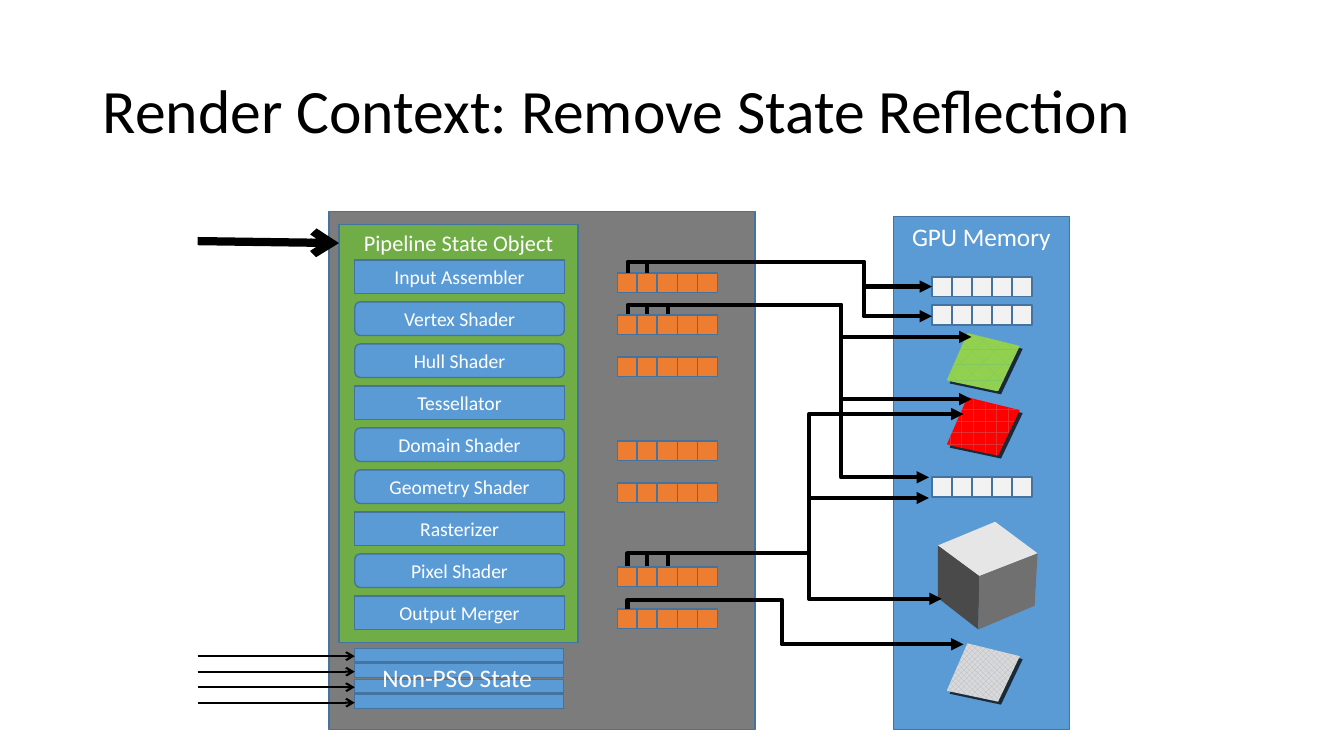
from dataclasses import dataclass
from typing import Any, NamedTuple, Optional

from lxml import etree
from pptx import Presentation
from pptx import util as u
from pptx.dml.color import RGBColor
from pptx.enum import dml, shapes, text
from pptx.oxml.ns import qn

COLOURS = {
    "ink": "000000", "paper": "FFFFFF", "context": "7C7C7C", "pso": "70AD47",
    "block": "5B9BD5", "edge": "43739E", "register": "ED7D31", "buffer": "F2F2F2",
    "tile_edge": "1B2A38", "cube_top": "E7E6E6", "cube_left": "4A4A4A", "cube_right": "707070",
    "brick": "E03030", "red": "FF0000", "divot": "7FC860", "green": "92D050",
    "diamond": "B4B8C4", "silver": "D9D9D9",
}
CM_PER_INCH = 2.54
RECT = shapes.MSO_SHAPE.RECTANGLE
ROUNDED = shapes.MSO_SHAPE.FLOWCHART_ALTERNATE_PROCESS
STAGE_TOP, REGISTER_TOP, ROW_PITCH = 2.63, 2.76, 0.425
CELL, CELL_PITCH, CELL_COUNT = 0.2, 0.2025, 5
CENTRED = {"alignment": text.PP_ALIGN.CENTER}
Points = list[tuple[float, float]]


class Box(NamedTuple):
    left: float
    top: float
    width: float
    height: float


class Stage(NamedTuple):
    label: str
    outline: Any


class Tile(NamedTuple):
    top: float
    pattern: Any
    fore: str
    back: str


@dataclass
class Route:
    start: tuple[float, float]
    end: tuple[float, float]
    bus: float
    trunk: Optional[float] = None


@dataclass
class Branch:
    start: tuple[float, float]
    end: tuple[float, float]
    bend: float


STAGES = [
    Stage("Input Assembler", RECT), Stage("Vertex Shader", ROUNDED),
    Stage("Hull Shader", ROUNDED), Stage("Tessellator", RECT),
    Stage("Domain Shader", ROUNDED), Stage("Geometry Shader", ROUNDED),
    Stage("Rasterizer", RECT), Stage("Pixel Shader", ROUNDED),
    Stage("Output Merger", RECT),
]
REGISTER_ROWS = [0, 1, 2, 4, 5, 7, 8]
BUFFER_TOPS = [2.8, 3.09, 4.83]
TILES = [
    Tile(3.37, dml.MSO_PATTERN.DIVOT, "divot", "green"),
    Tile(4.02, dml.MSO_PATTERN.HORIZONTAL_BRICK, "brick", "red"),
    Tile(6.51, dml.MSO_PATTERN.SOLID_DIAMOND, "diamond", "silver"),
]
TILE_CORNERS = [(9.79, 0), (10.32, 0.13), (10.1, 0.59), (9.58, 0.48)]
CUBE_FACES = {
    "cube_top": [(10.07, 5.28), (10.5, 5.6), (9.91, 5.83), (9.49, 5.52)],
    "cube_left": [(9.49, 5.52), (9.91, 5.83), (9.9, 6.37), (9.49, 6.05)],
    "cube_right": [(10.5, 5.6), (10.47, 6.13), (9.9, 6.37), (9.91, 5.83)],
}
ROUTES = [
    Route((6.35, 2.76), (9.43, 2.9), 2.65, 8.74),
    Route((6.55, 2.76), (9.43, 3.2), 2.65, 8.74),
    Route((6.35, 3.18), (9.83, 3.41), 3.09, 8.51),
    Route((6.76, 3.18), (9.4, 4.83), 3.09, 8.51),
    Route((6.55, 3.18), (9.83, 4.04), 3.09, 8.51),
    Route((6.76, 5.73), (9.53, 6.06), 5.6, 8.19),
    Route((6.55, 5.73), (8.19, 5.6), 5.6),
    Route((6.35, 5.73), (8.19, 5.6), 5.6),
    Route((6.35, 6.16), (9.75, 6.52), 6.07, 7.91),
]
BRANCHES = [
    Branch((8.19, 5.6), (9.4, 5.04), 8.19),
    Branch((8.21, 5.03), (9.75, 4.19), 8.19),
]


def length(inches: float) -> u.Length:
    return u.Cm(inches * CM_PER_INCH)


def colour(name: str) -> RGBColor:
    return RGBColor.from_string(COLOURS[name])


def apply(target: Any, values: dict[str, Any]) -> None:
    for attribute, value in values.items():
        setattr(target, attribute, value)


def write(frame: Any, words: str, size: float, ink: str, layout: dict[str, Any]) -> None:
    paragraph = frame.paragraphs[0]
    apply(paragraph, layout)
    run = paragraph.add_run()
    run.text = words
    apply(run.font, {"name": "Calibri", "size": u.Pt(size)})
    run.font.color.rgb = colour(ink)


def draw_block(parent: Any, box: Box, fill: str, outline: Any = RECT, edge: float = 1) -> Any:
    block = parent.add_shape(outline, *map(length, box))
    block.shadow.inherit = False
    block.fill.solid()
    block.fill.fore_color.rgb = colour(fill)
    block.line.color.rgb = colour("edge")
    block.line.width = u.Pt(edge)
    return block


def draw_labelled(parent: Any, box: Box, fill: str, label: str, size: float,
                  anchor: Any, outline: Any = RECT) -> None:
    frame = draw_block(parent, box, fill, outline).text_frame
    apply(frame, {"vertical_anchor": anchor, "word_wrap": True})
    write(frame, label, size, "paper", CENTRED)


def draw_cells(parent: Any, left: float, top: float, fill: str) -> None:
    row = parent.add_group_shape().shapes
    for column in range(CELL_COUNT):
        draw_block(row, Box(left + column * CELL_PITCH, top, CELL, CELL), fill, edge=1.25)


def draw_face(parent: Any, corners: Points, fill: str) -> Any:
    emu = [(length(x), length(y)) for x, y in corners]
    builder = parent.build_freeform(*emu[0])
    builder.add_line_segments(emu[1:], close=True)
    face = builder.convert_to_shape()
    face.shadow.inherit = False
    face.fill.solid()
    face.fill.fore_color.rgb = colour(fill)
    face.line.fill.background()
    return face


def draw_tile(parent: Any, tile: Tile) -> None:
    corners = [(x, tile.top + y) for x, y in TILE_CORNERS]
    draw_face(parent, [(x + 0.03, y + 0.03) for x, y in corners], "tile_edge")
    surface = draw_face(parent, corners, tile.back).fill
    surface.patterned()
    surface.pattern = tile.pattern
    surface.fore_color.rgb = colour(tile.fore)
    surface.back_color.rgb = colour(tile.back)


def draw_line(parent: Any, kind: Any, start: tuple[float, float], end: tuple[float, float],
              width: float, head: Optional[str]) -> Any:
    wire = parent.add_connector(kind, *map(length, (*start, *end)))
    wire.line.color.rgb = colour("ink")
    wire.line.width = u.Pt(width)
    properties = wire._element.spPr
    if head:
        etree.SubElement(properties.find(qn("a:ln")), qn("a:tailEnd"), type=head)
    etree.SubElement(properties, qn("a:effectLst"))
    return properties


def set_bends(properties: Any, preset: str, bends: list[float]) -> None:
    geometry = properties.find(qn("a:prstGeom"))
    geometry.set("prst", preset)
    guides = geometry.find(qn("a:avLst"))
    for number, bend in enumerate(bends, 1):
        etree.SubElement(guides, qn("a:gd"), name=f"adj{number}", fmla=f"val {round(bend * 100000)}")


def draw_route(parent: Any, route: Route) -> None:
    (x0, y0), (x1, y1) = route.start, route.end
    across, down = x1 - x0, y1 - y0
    middle_x, middle_y = (x0 + x1) / 2, (y0 + y1) / 2
    half_width, half_height = abs(down) / 2, across / 2
    properties = draw_line(parent, shapes.MSO_CONNECTOR.ELBOW,
                           (middle_x - half_width, middle_y - half_height),
                           (middle_x + half_width, middle_y + half_height),
                           3, "triangle" if route.trunk else None)
    frame = properties.find(qn("a:xfrm"))
    frame.set("rot", "16200000")
    if down > 0:
        frame.set("flipH", "1")
    if route.trunk:
        set_bends(properties, "bentConnector4", [(route.bus - y0) / down, (route.trunk - x0) / across])
    else:
        set_bends(properties, "bentConnector2", [])


def draw_branch(parent: Any, branch: Branch) -> None:
    properties = draw_line(parent, shapes.MSO_CONNECTOR.ELBOW, branch.start, branch.end, 3, "triangle")
    x0, x1 = branch.start[0], branch.end[0]
    set_bends(properties, "bentConnector3", [(branch.bend - x0) / (x1 - x0)])


def main() -> None:
    deck = Presentation()
    apply(deck, {"slide_width": length(13.6), "slide_height": length(7.65)})
    slide = deck.slides.add_slide(deck.slide_layouts[5])
    canvas = slide.shapes
    heading = canvas.title
    apply(heading, dict(zip(("left", "top", "width", "height"), map(length, (0.94, 0.41, 11.73, 1.48)))))
    apply(heading.text_frame, {"vertical_anchor": text.MSO_ANCHOR.MIDDLE, "word_wrap": True,
                               "auto_size": text.MSO_AUTO_SIZE.NONE})
    write(heading.text_frame, "Render Context: Remove State Reflection", 44.9, "ink",
          {"alignment": text.PP_ALIGN.LEFT, "line_spacing": 0.9})

    draw_block(canvas, Box(3.33, 2.14, 4.31, 5.24), "context")
    draw_labelled(canvas, Box(3.43, 2.27, 2.42, 4.23), "pso", "Pipeline State Object", 16.3, text.MSO_ANCHOR.TOP)
    for row, stage in enumerate(STAGES):
        draw_labelled(canvas, Box(3.59, STAGE_TOP + row * ROW_PITCH, 2.12, 0.34), "block",
                      stage.label, 14.3, text.MSO_ANCHOR.MIDDLE, stage.outline)
    draw_labelled(canvas, Box(9.04, 2.19, 1.78, 5.19), "block", "GPU Memory", 18.4, text.MSO_ANCHOR.TOP)

    for fill, corners in CUBE_FACES.items():
        draw_face(canvas, corners, fill)
    for tile in TILES:
        draw_tile(canvas, tile)
    for row in REGISTER_ROWS:
        draw_cells(canvas, 6.25, REGISTER_TOP + row * ROW_PITCH, "register")
    for top in BUFFER_TOPS:
        draw_cells(canvas, 9.43, top, "buffer")
    for route in ROUTES:
        draw_route(canvas, route)
    for branch in BRANCHES:
        draw_branch(canvas, branch)

    for row in range(4):
        top = 6.56 + row * 0.157
        draw_block(canvas, Box(3.59, top, 2.11, 0.14), "block")
        draw_line(canvas, shapes.MSO_CONNECTOR.STRAIGHT, (2, top + 0.08), (3.59, top + 0.08), 1.5, "arrow")
    non_pso = canvas.add_textbox(*map(length, (3.77, 6.65, 1.76, 0.42))).text_frame
    apply(non_pso, {"word_wrap": False, "auto_size": text.MSO_AUTO_SIZE.SHAPE_TO_FIT_TEXT})
    write(non_pso, "Non-PSO State", 18.4, "paper", {})
    draw_line(canvas, shapes.MSO_CONNECTOR.STRAIGHT, (2, 2.44), (3.43, 2.46), 6, "arrow")
    deck.save("out.pptx")


if __name__ == "__main__":
    main()
